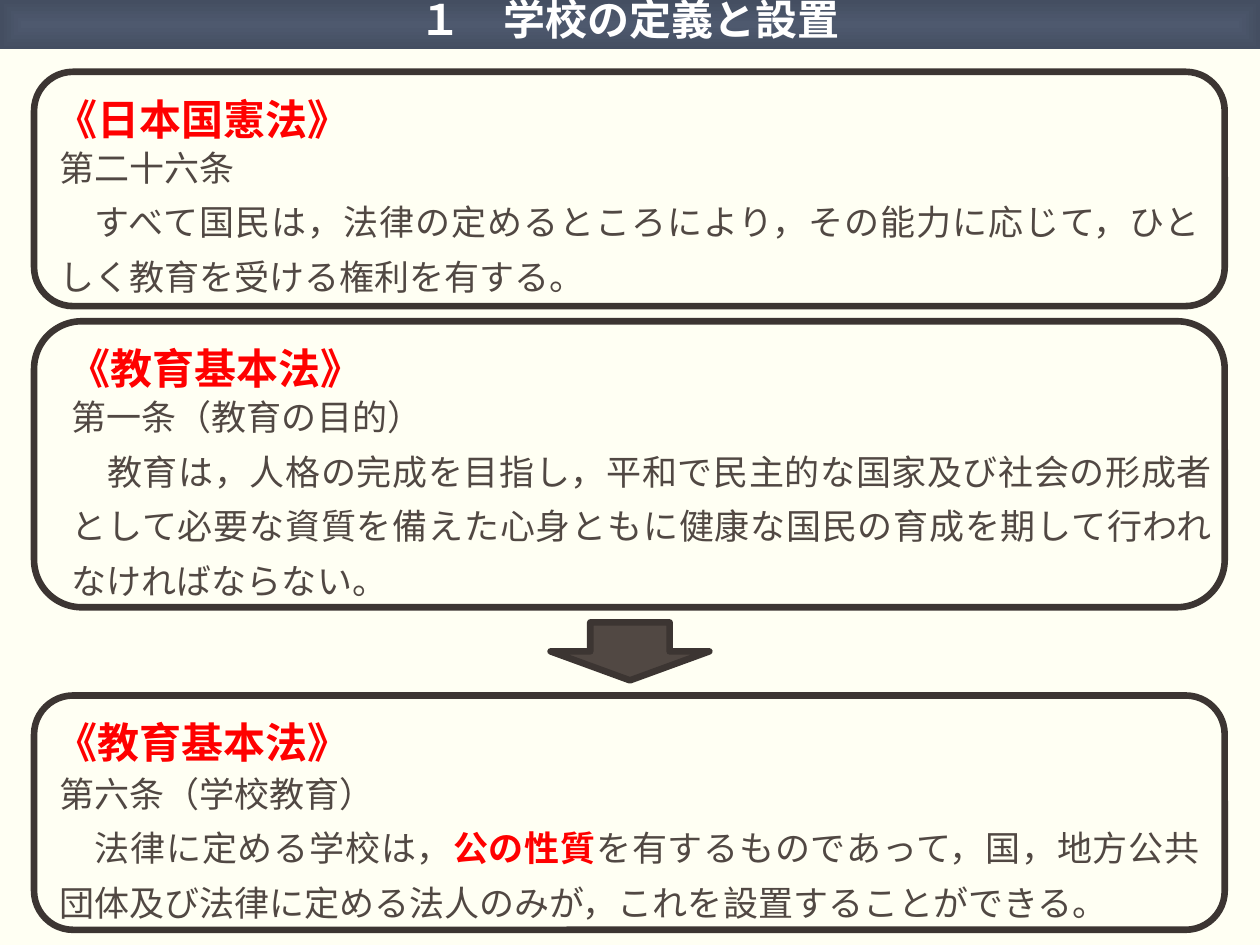
import pptx
import pptx.util
import pptx.dml.color
import pptx.enum.shapes
import pptx.enum.text
import pptx.oxml
import pptx.oxml.ns

Inches, Pt = pptx.util.Inches, pptx.util.Pt
SHAPE = pptx.enum.shapes.MSO_SHAPE
ALIGN = pptx.enum.text.PP_ALIGN
ANCHOR = pptx.enum.text.MSO_ANCHOR
FIT = pptx.enum.text.MSO_AUTO_SIZE
CJK = "Noto Sans CJK JP"
HUES = {"back": "FFFFF3", "ink": "514843", "edge": "3C3532", "red": "FF0000",
        "white": "FFFFFF", "inner": "4E596E", "outer": "444E61"}

TITLE = "１　学校の定義と設置"
LAWS = [
    {"top": 0.57, "high": 1.86, "shift": 0, "drop": 0.44, "head": " 《日本国憲法》",
     "body": [["第二十六条"],
              ["　すべて国民は，法律の定めるところにより，その能力に応じて，ひとしく教育を受ける権利を有する。"]]},
    {"top": 2.55, "high": 2.27, "shift": 0.1, "drop": 0.44, "head": " 《教育基本法》",
     "body": [["第一条（教育の目的）"],
              ["　教育は，人格の完成を目指し，平和で民主的な国家及び社会の形成者として必要な資質を備えた"
               "心身ともに健康な国民の育成を期して行われなければならない。"]]},
    {"top": 5.52, "high": 1.86, "shift": 0, "drop": 0.46, "head": " 《教育基本法》",
     "body": [["第六条（学校教育）"],
              ["　法律に定める学校は，", "公の性質",
               "を有するものであって，国，地方公共団体及び法律に定める法人のみが，これを設置することができる。"]]},
]
KEY = "公の性質"
LEFT, WIDE = 0.27, 9.45


def tint(name):
    return pptx.dml.color.RGBColor.from_string(HUES[name])


def style(para, face, size, hue, bold, align, space):
    para.alignment, para.line_spacing = align, space
    font = para.font
    font.name, font.size, font.bold = face, Pt(size), bold
    font.color.rgb = tint(hue)
    latin = para._p.find(".//" + pptx.oxml.ns.qn("a:latin"))
    latin.addnext(pptx.oxml.parse_xml(
        f'<a:ea {pptx.oxml.ns.nsdecls("a")} typeface="{CJK}"/>'))


def draw(shapes, kind, box, fill=None):
    shape = shapes.add_shape(kind, *map(Inches, box))
    shape.shadow.inherit = False
    if fill:
        shape.fill.solid()
        shape.fill.fore_color.rgb = tint(fill)
    else:
        shape.fill.background()
    shape.line.color.rgb = tint("edge")
    shape.line.width = Pt(3.78)


def write(shapes, box, lines, size, hue, bold):
    frame = shapes.add_textbox(*map(Inches, box)).text_frame
    frame.word_wrap, frame.auto_size = True, FIT.SHAPE_TO_FIT_TEXT
    for i, parts in enumerate(lines):
        para = frame.add_paragraph() if i else frame.paragraphs[0]
        style(para, "Arial", size, hue, bold, ALIGN.JUSTIFY, 1.3)
        for part in parts:
            run = para.add_run()
            run.text = part
            if part == KEY:
                run.font.bold = True
                run.font.color.rgb = tint("red")


def banner(shape):
    shape.left, shape.top, shape.width, shape.height = map(Inches, (0, 0, 10, 0.39))
    shape.fill.gradient()
    for stop, hue, spot in zip(shape.fill.gradient_stops, ("inner", "outer"), (0, 1)):
        stop.color.rgb, stop.position = tint(hue), spot
    lin = shape._element.spPr.find(".//" + pptx.oxml.ns.qn("a:lin"))
    lin.getparent().replace(lin, pptx.oxml.parse_xml(
        f'<a:path {pptx.oxml.ns.nsdecls("a")} path="rect">'
        '<a:fillToRect l="50000" t="50000" r="50000" b="50000"/></a:path>'))
    frame = shape.text_frame
    frame.text = TITLE
    frame.auto_size, frame.vertical_anchor = FIT.NONE, ANCHOR.BOTTOM
    frame.margin_left = frame.margin_right = 0
    frame.margin_top = frame.margin_bottom = Inches(0.04)
    style(frame.paragraphs[0], CJK, 24, "white", True, ALIGN.CENTER, 0.9)


def main():
    """Build the slide on the legal basis of schools."""
    deck = pptx.Presentation()
    deck.slide_width, deck.slide_height = Inches(10), Inches(7.5)
    slide = deck.slides.add_slide(deck.slide_layouts[5])
    slide.background.fill.solid()
    slide.background.fill.fore_color.rgb = tint("back")
    banner(slide.shapes.title)
    for law in LAWS:
        shapes = slide.shapes.add_group_shape().shapes
        top, high, drop = law["top"], law["high"], law["drop"]
        left = LEFT + law["shift"]
        draw(shapes, SHAPE.ROUNDED_RECTANGLE, (LEFT, top, WIDE, high))
        write(shapes, (left, top, 5.03, 0.6), [[law["head"]]], 24, "red", True)
        write(shapes, (left + 0.1, top + drop, WIDE - 0.2, high - drop),
              law["body"], 20, "ink", False)
    draw(slide.shapes, SHAPE.DOWN_ARROW, (4.37, 4.94, 1.26, 0.46), "ink")
    deck.save("out.pptx")


if __name__ == "__main__":
    main()
